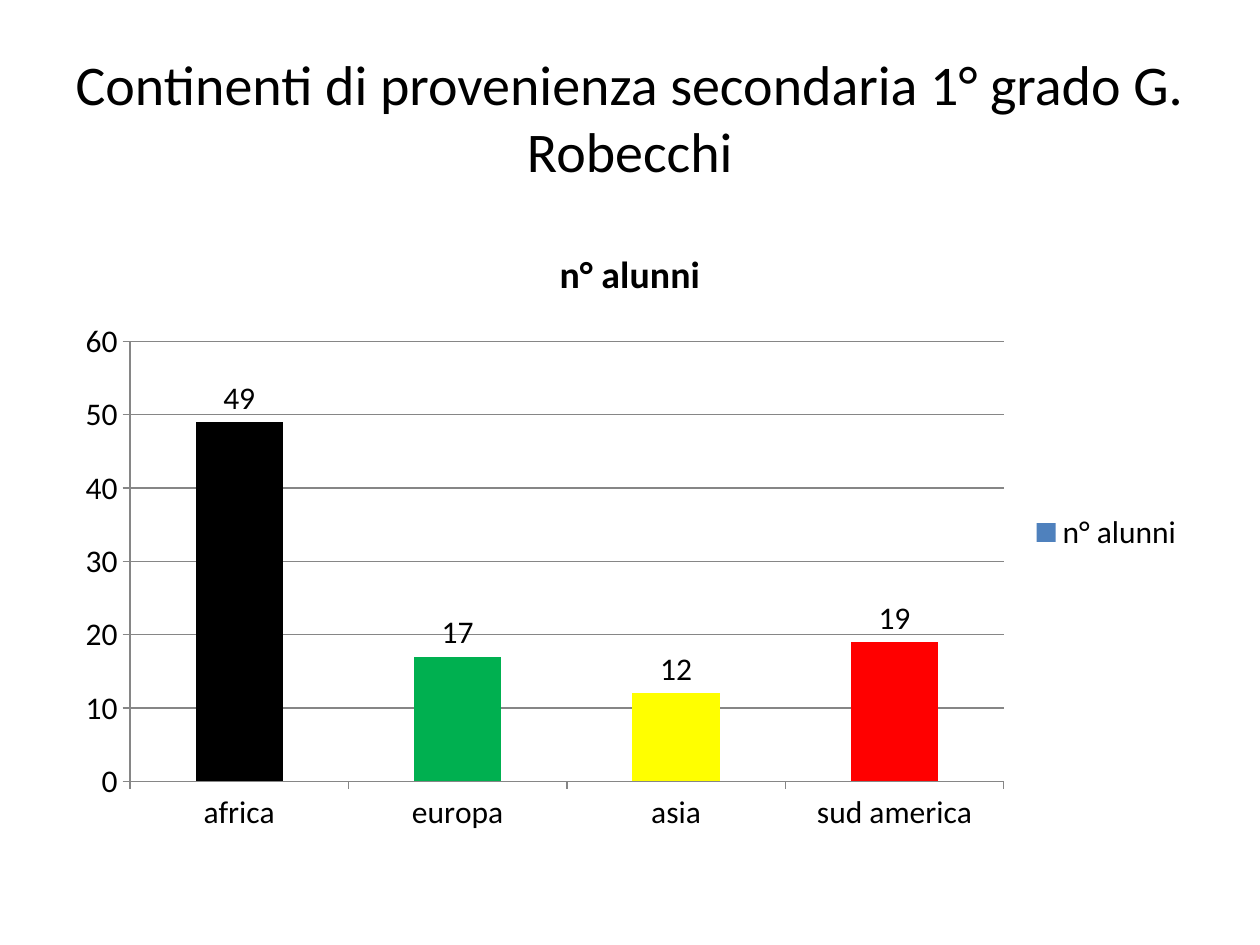
import pptx
import pptx.chart.data
import pptx.dml.color
import pptx.enum.chart
import pptx.enum.text
import pptx.util

Cm = pptx.util.Cm
Pt = pptx.util.Pt
RGBColor = pptx.dml.color.RGBColor

BLACK = RGBColor(0x00, 0x00, 0x00)
GREEN = RGBColor(0x00, 0xB0, 0x50)
YELLOW = RGBColor(0xFF, 0xFF, 0x00)
RED = RGBColor(0xFF, 0x00, 0x00)
BLUE = RGBColor(0x4F, 0x81, 0xBD)
GREY = RGBColor(0x86, 0x86, 0x86)

FONT = "Calibri"
SERIES_NAME = "n° alunni"
CONTINENTS = [
    ("africa", 49, BLACK),
    ("europa", 17, GREEN),
    ("asia", 12, YELLOW),
    ("sud america", 19, RED),
]


def style_font(font, size, bold=False):
    font.name = FONT
    font.size = Pt(size)
    font.bold = bold
    font.color.rgb = BLACK


def style_line(line_format):
    line_format.color.rgb = GREY
    line_format.width = Pt(0.75)


def add_heading(page, left, top, width, height):
    box = page.shapes.add_textbox(left, top, width, height)
    text_frame = box.text_frame
    text_frame.word_wrap = True
    text_frame.vertical_anchor = pptx.enum.text.MSO_ANCHOR.MIDDLE
    text_frame.text = "Continenti di provenienza secondaria 1° grado G. Robecchi"
    para = text_frame.paragraphs[0]
    para.alignment = pptx.enum.text.PP_ALIGN.CENTER
    style_font(para.runs[0].font, 32)


def style_axes(chart):
    for axis in (chart.category_axis, chart.value_axis):
        axis.major_tick_mark = pptx.enum.chart.XL_TICK_MARK.OUTSIDE
        axis.minor_tick_mark = pptx.enum.chart.XL_TICK_MARK.NONE
        style_line(axis.format.line)
    values = chart.value_axis
    values.minimum_scale = 0
    values.maximum_scale = 60
    values.major_unit = 10
    values.has_major_gridlines = True
    style_line(values.major_gridlines.format.line)


def style_columns(plot):
    plot.gap_width = 150
    plot.vary_by_categories = False
    series = plot.series[0]
    series.invert_if_negative = False
    series.format.fill.solid()
    series.format.fill.fore_color.rgb = BLUE
    for index, (_, _, color) in enumerate(CONTINENTS):
        fill = series.points[index].format.fill
        fill.solid()
        fill.fore_color.rgb = color
    labels = series.data_labels
    labels.show_value = True
    labels.position = pptx.enum.chart.XL_LABEL_POSITION.OUTSIDE_END
    style_font(labels.font, 18)


def add_pupil_chart(page, left, top, width, height):
    data = pptx.chart.data.CategoryChartData()
    data.categories = [name for name, _, _ in CONTINENTS]
    data.add_series(SERIES_NAME, [count for _, count, _ in CONTINENTS])
    kind = pptx.enum.chart.XL_CHART_TYPE.COLUMN_CLUSTERED
    chart = page.shapes.add_chart(kind, left, top, width, height, data).chart
    style_font(chart.font, 18)
    chart.has_title = True
    title_frame = chart.chart_title.text_frame
    title_frame.text = SERIES_NAME
    style_font(title_frame.paragraphs[0].runs[0].font, 21.6, bold=True)
    chart.has_legend = True
    chart.legend.position = pptx.enum.chart.XL_LEGEND_POSITION.RIGHT
    chart.legend.include_in_layout = False
    style_axes(chart)
    style_columns(chart.plots[0])


def main():
    deck = pptx.Presentation()
    deck.slide_width = Cm(25.4)
    deck.slide_height = Cm(19.05)
    page = deck.slides.add_slide(deck.slide_layouts[6])
    margin = Cm(1.27)
    width = deck.slide_width - 2 * margin
    add_heading(page, margin, Cm(0.76), width, Cm(3.18))
    add_pupil_chart(page, margin, Cm(4.45), width, Cm(12.57))
    deck.save("out.pptx")


if __name__ == "__main__":
    main()
